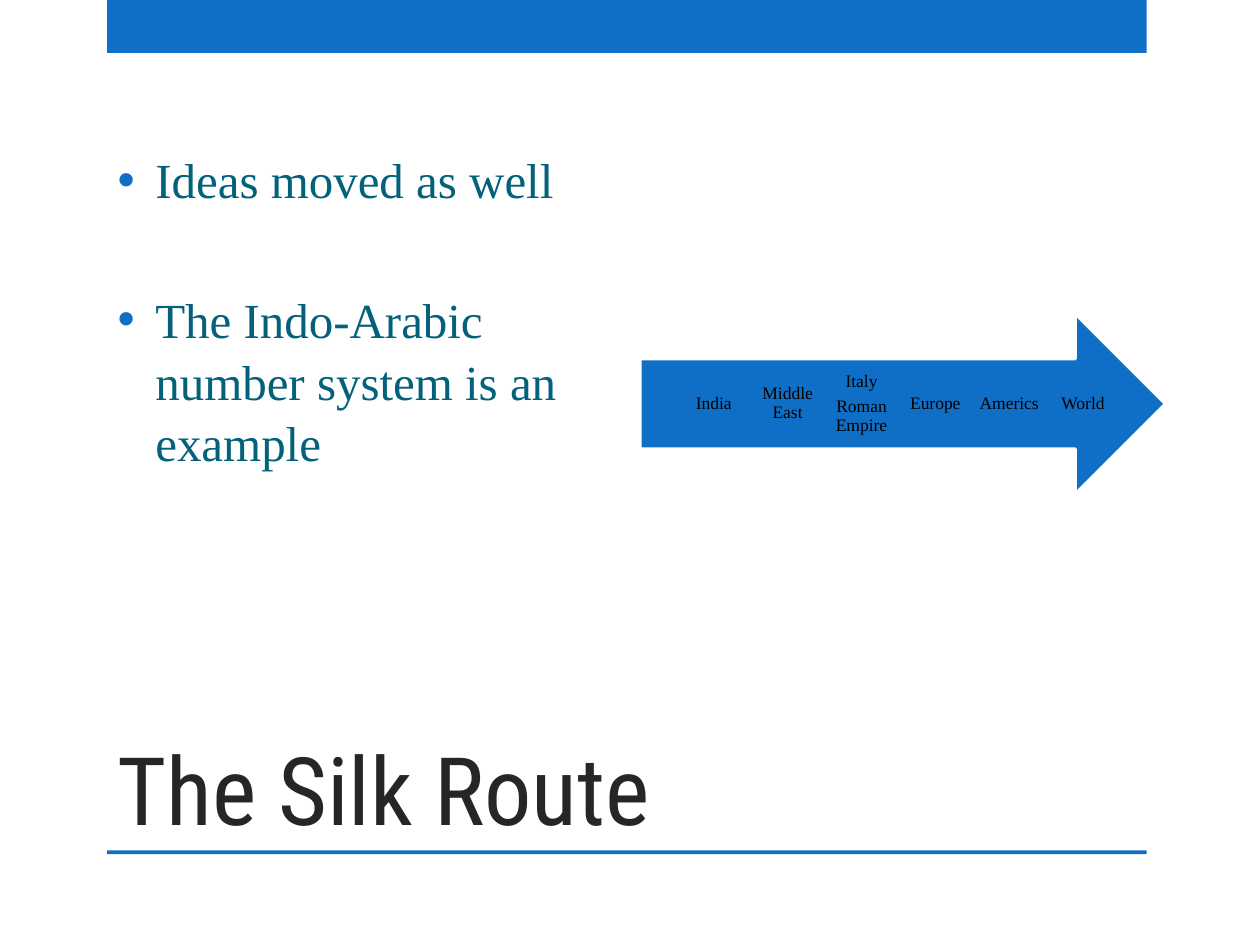
from lxml import etree
from pptx import Presentation
from pptx import util as u
from pptx.dml.color import RGBColor
from pptx.enum import shapes, text
from pptx.oxml.ns import qn

BLUE, TEAL, DARK, BLACK, WHITE = "0F6FC6", "04617B", "262626", "000000", "FFFFFF"
SERIF, HEADING = "Times New Roman", "Roboto Condensed"


def rgb(value):
    return RGBColor.from_string(value)


class Deck:
    """Holds the style and the current slide; boxes are percentages of the slide."""

    def __init__(self):
        self.prs = Presentation()
        self.prs.slide_width, self.prs.slide_height = u.Inches(10), u.Inches(7.5)
        self.s = self.prs.slides.add_slide(self.prs.slide_layouts[1])

    def box(self, x, y, w, h):
        across, down = self.prs.slide_width / 100, self.prs.slide_height / 100
        return int(x * across), int(y * down), int(w * across), int(h * down)

    def place(self, sp, box):
        sp.left, sp.top, sp.width, sp.height = self.box(*box)

    def font(self, p, size, name, color):
        for r in p.runs:
            r.font.size, r.font.name = u.Pt(size), name
            r.font.color.rgb = rgb(color)

    def shape(self, kind, box, line=None):
        sp = self.s.shapes.add_shape(kind, *self.box(*box))
        sp.shadow.inherit = False
        sp.fill.solid()
        sp.fill.fore_color.rgb = rgb(BLUE)
        if line:
            sp.line.color.rgb, sp.line.width = rgb(line), u.Pt(1.75)
        else:
            sp.line.fill.background()

    def title(self, words, box):
        sp = self.s.shapes.title
        self.place(sp, box)
        tf = sp.text_frame
        tf.text = words
        tf.auto_size = text.MSO_AUTO_SIZE.NONE
        tf.vertical_anchor = text.MSO_ANCHOR.BOTTOM
        p = tf.paragraphs[0]
        p.alignment = text.PP_ALIGN.LEFT
        self.font(p, 54, HEADING, DARK)

    def bullets(self, items, box, gap):
        sp = self.s.placeholders[1]
        self.place(sp, box)
        tf = sp.text_frame
        tf.text = "\n".join(items)
        tf.auto_size = text.MSO_AUTO_SIZE.NONE
        tf.vertical_anchor = text.MSO_ANCHOR.MIDDLE
        tf.margin_bottom = u.Inches(0.6)
        for i, p in enumerate(tf.paragraphs):
            p.line_spacing = 1.05
            if i:
                p.space_before = u.Pt(gap)
            self.font(p, 28, SERIF, TEAL)
            # Bullet indent, colour and character
            ppr = p._p.get_or_add_pPr()
            ppr.set("marL", str(u.Inches(0.3)))
            ppr.set("indent", str(-u.Inches(0.3)))
            color = etree.SubElement(ppr, qn("a:buClr"))
            etree.SubElement(color, qn("a:srgbClr"), val=BLUE)
            etree.SubElement(ppr, qn("a:buChar"), char="•")

    def label(self, words, box):
        tf = self.s.shapes.add_textbox(*self.box(*box)).text_frame
        tf.word_wrap = True
        tf.vertical_anchor = text.MSO_ANCHOR.MIDDLE
        tf.margin_left = tf.margin_right = 0
        tf.margin_top = tf.margin_bottom = u.Inches(0.11)
        tf.text = words
        for p in tf.paragraphs:
            p.alignment = text.PP_ALIGN.CENTER
            p.line_spacing, p.space_after = 0.9, u.Pt(3.5)
            self.font(p, 10, SERIF, BLACK)


def main():
    deck = Deck()
    kinds = shapes.MSO_SHAPE

    # Band at the top and rule under the title
    for y, h in ((0, 5.6), (90, 0.4)):
        deck.shape(kinds.RECTANGLE, (8.5, y, 82.5, h))

    # Title and list
    deck.title("The Silk Route", (8.33, 66.67, 74.2, 23.33))
    deck.bullets(["Ideas moved as well",
                  "The Indo-Arabic number system is an example"],
                 (8.33, 8.93, 40, 54.93), gap=44.5)

    # Route arrow with its stops at equal steps
    deck.shape(kinds.RIGHT_ARROW, (50.8, 33.2, 41.7, 19.07), line=WHITE)
    stops = ["India", "Middle East", "Italy\nRoman Empire", "Europe", "Americs", "World"]
    for i, stop in enumerate(stops):
        deck.label(stop, (54.2 + 5.86 * i, 38, 4.9, 9.47))

    deck.prs.save("out.pptx")


if __name__ == "__main__":
    main()
